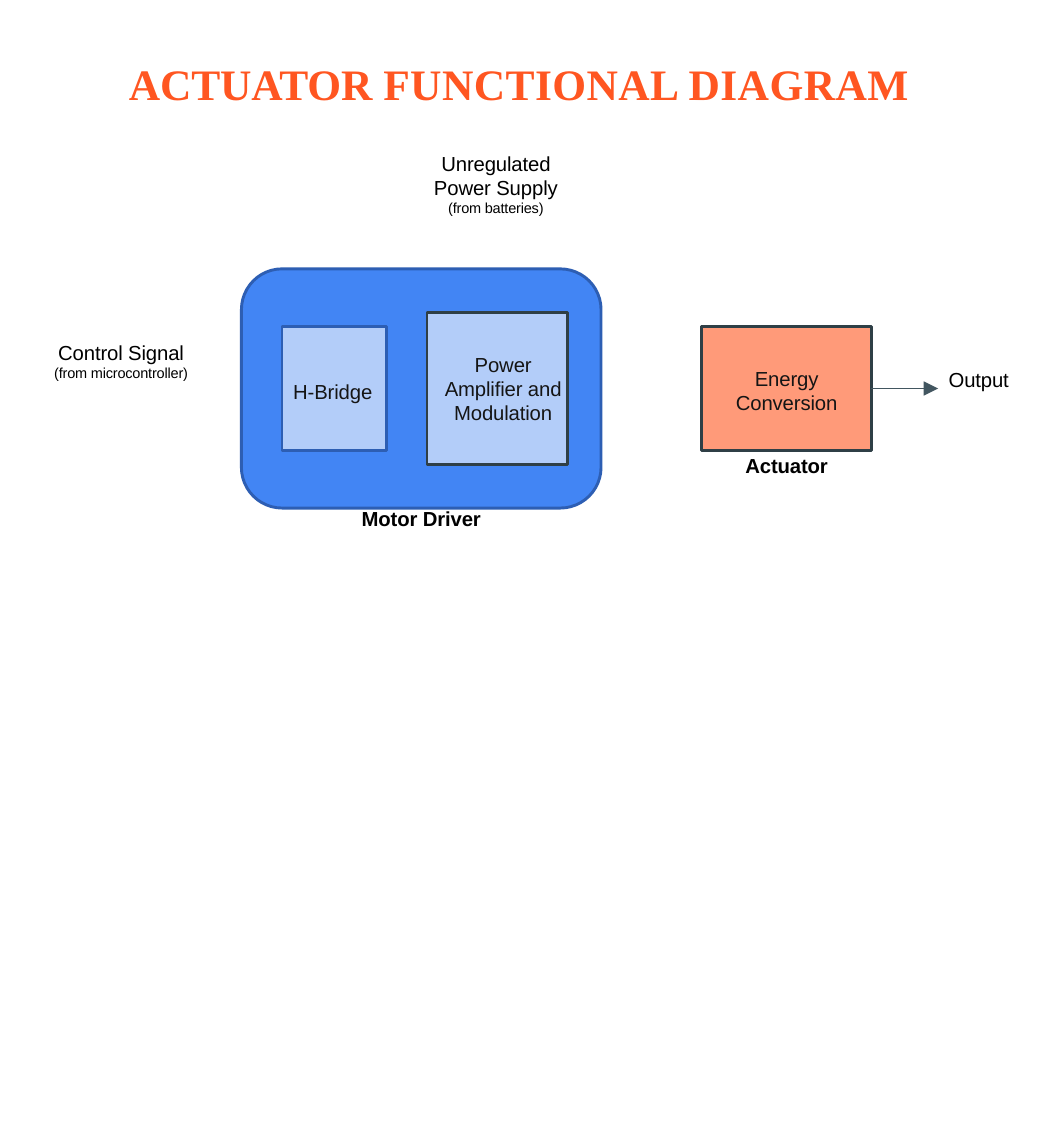
from lxml import etree
from pptx import Presentation
from pptx import util as u
from pptx.dml.color import RGBColor
from pptx.enum import shapes, text
from pptx.oxml.ns import qn

ORANGE, BLACK, INK = "FF5621", "000000", "151515"
BLUE, BLUE_EDGE, PALE_BLUE = "4285F4", "2D5EB3", "B3CDF9"
SALMON, DARK_EDGE, ARROW = "FF9A79", "2F3F46", "425660"
BODY = {"name": "Arial", "size": u.Pt(14), "bold": False}
CAPTION = BODY | {"bold": True}
NOTE = BODY | {"size": u.Pt(10)}
TITLE = {"name": "Times New Roman", "size": u.Pt(30), "bold": True}


def color(hex_value):
    return RGBColor.from_string(hex_value)


def add_run(paragraph, words, font, ink, tracking=-0.1):
    """Append a run; tracking is the letter spacing in points."""
    run = paragraph.add_run()
    run.text = words
    for name, value in font.items():
        setattr(run.font, name, value)
    run.font.color.rgb = color(ink)
    run._r.get_or_add_rPr().set("spc", str(round(tracking * 100)))


def prepare_frame(shape, anchor, insets):
    """Insets run left, top, right, bottom."""
    frame = shape.text_frame
    frame.word_wrap = True
    frame.vertical_anchor = anchor
    for side, inset in zip(("left", "top", "right", "bottom"), insets):
        setattr(frame, f"margin_{side}", u.Pt(inset))
    return frame


def write_lines(frame, lines, ink):
    """Each line is (words, font, line spacing in points)."""
    for index, (words, font, spacing) in enumerate(lines):
        paragraph = frame.add_paragraph() if index else frame.paragraphs[0]
        paragraph.alignment = text.PP_ALIGN.CENTER
        paragraph.line_spacing = u.Pt(spacing)
        add_run(paragraph, words, font, ink)


def add_label(slide, box, *lines):
    shape = slide.shapes.add_textbox(*map(u.Pt, box))
    frame = prepare_frame(shape, text.MSO_ANCHOR.TOP, (0, 1.7, 0, 0))
    write_lines(frame, lines, BLACK)


def add_block(slide, box, fill, edge, words="", insets=(0, 0, 0, 0),
              kind=shapes.MSO_SHAPE.RECTANGLE):
    block = slide.shapes.add_shape(kind, *map(u.Pt, box))
    block.shadow.inherit = False
    block.fill.solid()
    block.fill.fore_color.rgb = color(fill)
    block.line.color.rgb = color(edge)
    block.line.width = u.Pt(2)
    if words:
        frame = prepare_frame(block, text.MSO_ANCHOR.MIDDLE, insets)
        write_lines(frame, [(words, BODY, 16.5)], INK)
    return block


def add_title(slide, box):
    shape = slide.shapes.add_textbox(*map(u.Pt, box))
    frame = prepare_frame(shape, text.MSO_ANCHOR.MIDDLE, (0, 0, 0, 0))
    paragraph = frame.paragraphs[0]
    paragraph.alignment = text.PP_ALIGN.CENTER
    add_run(paragraph, "ACTUATOR ", TITLE, ORANGE)
    add_run(paragraph, "FUNCTIONAL DIAGRAM", TITLE, ORANGE, 0.3)


def add_motor_driver(slide, box):
    left, top, width, height = box
    housing = add_block(slide, box, BLUE, BLUE_EDGE,
                        kind=shapes.MSO_SHAPE.ROUNDED_RECTANGLE)
    housing.adjustments[0] = 0.17
    middle = top + height / 2
    add_block(slide, (left + 28, middle - 43, 72, 86), PALE_BLUE, BLUE_EDGE,
              "H-Bridge", (0, 5, 2, 0))
    add_block(slide, (left + 128, middle - 52.5, 97, 105), PALE_BLUE, DARK_EDGE,
              "Power Amplifier and Modulation", (8, 0, 0, 0))
    add_label(slide, (left, top + height - 2, width, 19),
              ("Motor Driver", CAPTION, 16))


def add_actuator(slide, box):
    """Energy conversion block with its caption and output arrow."""
    left, top, width, height = box
    right, middle = left + width, top + height / 2
    block = add_block(slide, box, SALMON, DARK_EDGE, "Energy Conversion",
                      (12, 3, 12, 0))
    add_label(slide, (left, top + height + 1, width, 19),
              ("Actuator", CAPTION, 16))
    arrow = slide.shapes.add_connector(
        shapes.MSO_CONNECTOR.STRAIGHT,
        *map(u.Pt, (right, middle, right + 46, middle)))
    arrow.begin_connect(block, 3)
    arrow.line.color.rgb = color(ARROW)
    arrow.line.width = u.Pt(1.25)
    etree.SubElement(arrow.line._get_or_add_ln(), qn("a:tailEnd"),
                     type="triangle", w="lg", len="lg")
    etree.SubElement(arrow._element.spPr, qn("a:effectLst"))
    add_label(slide, (right + 51, middle - 15.5, 46, 19), ("Output", BODY, 16))


def main():
    presentation = Presentation()
    presentation.slide_width, presentation.slide_height = u.Pt(720), u.Pt(792)
    slide = presentation.slides.add_slide(presentation.slide_layouts[6])
    add_title(slide, (78, 37, 560, 40))
    add_label(slide, (298, 103, 88, 48),
              ("Unregulated Power Supply", BODY, 16.5),
              ("(from batteries)", NOTE, 11.5))
    add_label(slide, (33, 233, 101, 31),
              ("Control Signal", BODY, 16.8),
              ("(from microcontroller)", NOTE, 12))
    add_motor_driver(slide, (166.5, 185.5, 248, 165))
    add_actuator(slide, (484, 225, 117, 86))
    presentation.save("out.pptx")


if __name__ == "__main__":
    main()
